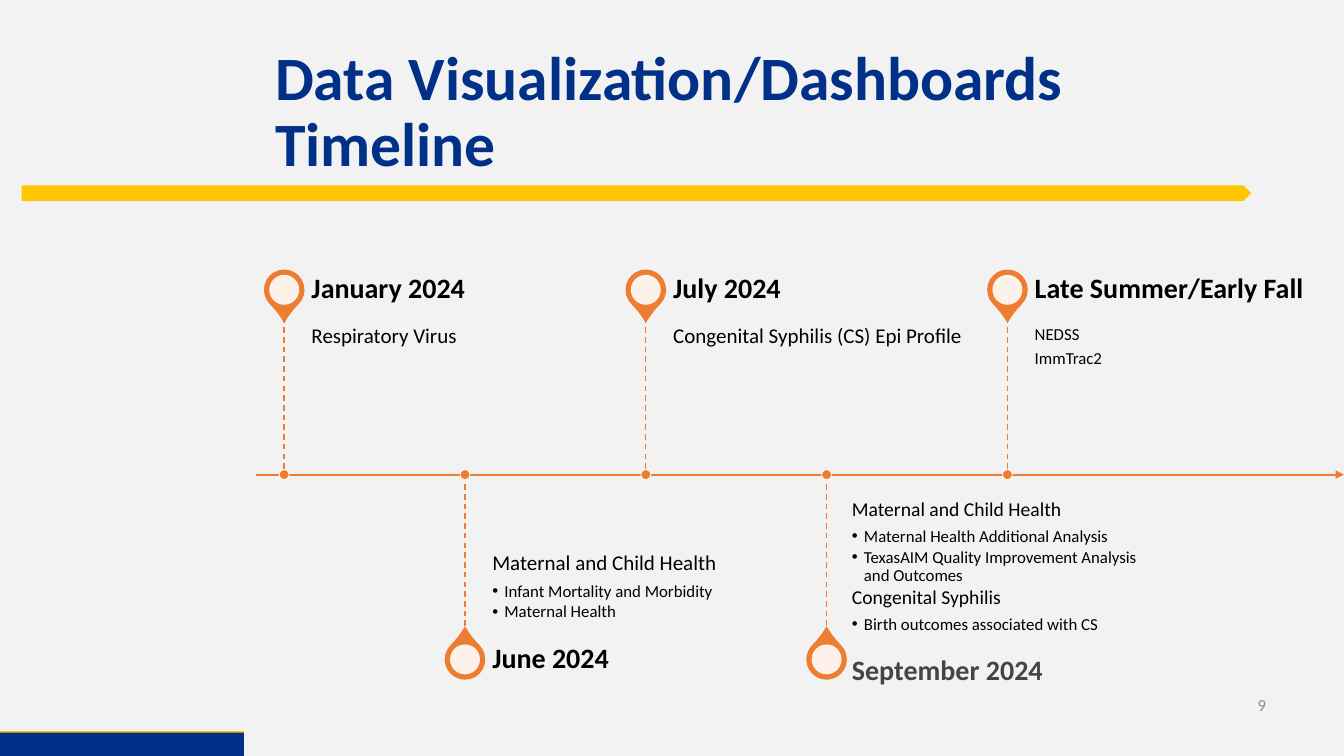
from lxml import etree
from pptx import Presentation
from pptx.dml.color import RGBColor
from pptx.enum.dml import MSO_LINE
from pptx.enum.shapes import MSO_CONNECTOR, MSO_SHAPE
from pptx.enum.text import MSO_ANCHOR, PP_ALIGN
from pptx.oxml.ns import qn
from pptx.util import Pt

# Content: date, date colour, (text, size, is bullet) lines
BLACK = RGBColor(0x00, 0x00, 0x00)
DARK_GRAY = RGBColor(0x44, 0x44, 0x44)
TITLE = "Data Visualization/Dashboards Timeline"
SLIDE_NUMBER = "9"
MILESTONES = [
    ("January 2024", BLACK, [("Respiratory Virus", 15, False)]),
    ("June 2024", BLACK, [
        ("Maternal and Child Health", 15, False),
        ("Infant Mortality and Morbidity", 12, True),
        ("Maternal Health", 12, True),
    ]),
    ("July 2024", BLACK, [("Congenital Syphilis (CS) Epi Profile", 15, False)]),
    ("September 2024", DARK_GRAY, [
        ("Maternal and Child Health", 14, False),
        ("Maternal Health Additional Analysis", 12, True),
        ("TexasAIM Quality Improvement Analysis and Outcomes", 12, True),
        ("Congenital Syphilis", 14, False),
        ("Birth outcomes associated with CS", 12, True),
    ]),
    ("Late Summer/Early Fall", BLACK, [("NEDSS", 12, False), ("ImmTrac2", 12, False)]),
]
# Milestone index: shift of its text (right, down)
TEXT_SHIFT = {3: (-1.5, 8.6)}
# Milestone index: top and bottom margins of its details
DETAIL_MARGINS = {4: (5.8, 8.6)}

# Style
FONT = "Calibri"
BACKGROUND = RGBColor(0xF2, 0xF2, 0xF2)
WHITE = RGBColor(0xFF, 0xFF, 0xFF)
NAVY = RGBColor(0x00, 0x30, 0x87)
YELLOW = RGBColor(0xFF, 0xC6, 0x00)
ORANGE = RGBColor(0xED, 0x7D, 0x31)
NUMBER_GRAY = RGBColor(0x8C, 0x8C, 0x8C)
STRAIGHT = MSO_CONNECTOR.STRAIGHT
DASH = MSO_LINE.DASH
RECTANGLE, OVAL = MSO_SHAPE.RECTANGLE, MSO_SHAPE.OVAL
TEARDROP, PENTAGON = MSO_SHAPE.TEAR, MSO_SHAPE.PENTAGON
TOP, MIDDLE, BOTTOM = MSO_ANCHOR.TOP, MSO_ANCHOR.MIDDLE, MSO_ANCHOR.BOTTOM

# Timeline geometry
AXIS_Y, AXIS_LEFT, AXIS_RIGHT = 339, 182.7, 960
FIRST_X, STEP_X = 203, 129.15
STEM, PIN_DISTANCE = 112.2, 132
DATE_HEIGHT, TEXT_WIDTH, TEXT_GAP = 39.6, 215.3, 19.5
PIN_SIZE, HOLE_SIZE, DOT_SIZE = 28, 21.4, 7
BULLET_INDENT = 8.64

presentation = Presentation()
presentation.slide_width, presentation.slide_height = Pt(960), Pt(540)
slide = presentation.slides.add_slide(presentation.slide_layouts[6])
slide.background.fill.solid()
slide.background.fill.fore_color.rgb = BACKGROUND


def add_filled(kind, left, top, width, height, fill, line=None, line_width=1):
    shape = slide.shapes.add_shape(kind, Pt(left), Pt(top), Pt(width), Pt(height))
    shape.shadow.inherit = False
    shape.fill.solid()
    shape.fill.fore_color.rgb = fill
    if line is None:
        shape.line.fill.background()
    else:
        shape.line.color.rgb = line
        shape.line.width = Pt(line_width)
    return shape


def add_centred(kind, x, y, size, *style):
    return add_filled(kind, x - size / 2, y - size / 2, size, size, *style)


def add_line(x1, y1, x2, y2, color, width):
    connector = slide.shapes.add_connector(STRAIGHT, Pt(x1), Pt(y1), Pt(x2), Pt(y2))
    connector.line.color.rgb = color
    connector.line.width = Pt(width)
    etree.SubElement(connector.element.spPr, qn("a:effectLst"))
    return connector


def add_text_box(left, top, width, height, anchor, margins=(7.2, 3.6, 7.2, 3.6)):
    frame = slide.shapes.add_textbox(Pt(left), Pt(top), Pt(width), Pt(height)).text_frame
    frame.word_wrap = True
    frame.vertical_anchor = anchor
    (frame.margin_left, frame.margin_top,
     frame.margin_right, frame.margin_bottom) = (Pt(margin) for margin in margins)
    return frame


def write(paragraph, text, size, color, bold=False, after=0, bullet=False):
    paragraph.text = text
    if bullet:
        properties = paragraph._p.get_or_add_pPr()
        properties.set("marL", str(Pt(BULLET_INDENT)))
        properties.set("indent", str(-Pt(BULLET_INDENT)))
        etree.SubElement(properties, qn("a:buFont"), typeface="Arial")
        etree.SubElement(properties, qn("a:buChar"), char="•")
    paragraph.line_spacing = 0.9
    paragraph.space_after = Pt(after)
    font = paragraph.font
    font.name, font.size, font.bold = FONT, Pt(size), bold
    font.color.rgb = color


def add_milestone(index, date, date_color, details):
    x = FIRST_X + index * STEP_X
    above = index % 2 == 0
    side = -1 if above else 1
    pin_y = AXIS_Y + side * PIN_DISTANCE
    stem_end = AXIS_Y + side * STEM

    # Pin
    pin = add_centred(TEARDROP, x, pin_y, PIN_SIZE, ORANGE, ORANGE, 1)
    pin.adjustments[0] = 1.15
    pin.rotation = 135 if above else 315
    hole = add_centred(OVAL, x, pin_y, HOLE_SIZE, WHITE)
    color = hole.fill._xPr.find(qn("a:solidFill"))[0]
    etree.SubElement(color, qn("a:alpha"), val="90000")

    # Details and date
    shift_x, shift_y = TEXT_SHIFT.get(index, (0, 0))
    left = x + TEXT_GAP + shift_x
    inner, outer = (7.2, 11.5) if above else (11.5, 7.2)
    margin_top, margin_bottom = DETAIL_MARGINS.get(index, (inner, outer))
    frame = add_text_box(left, min(AXIS_Y, stem_end) + shift_y, TEXT_WIDTH, STEM,
                         TOP if above else BOTTOM,
                         (0, margin_top, 7.2 if above else 0, margin_bottom))
    for number, (text, size, bullet) in enumerate(details):
        paragraph = frame.add_paragraph() if number else frame.paragraphs[0]
        write(paragraph, text, size, BLACK, after=size * (0.15 if bullet else 0.35),
              bullet=bullet)
    date_top = stem_end - DATE_HEIGHT if above else stem_end
    frame = add_text_box(left, date_top + shift_y, TEXT_WIDTH, DATE_HEIGHT, MIDDLE,
                         (0, 0, 10, 0))
    write(frame.paragraphs[0], date, 20, date_color, bold=True, after=7)

    # Stem and dot
    add_line(x, min(AXIS_Y, stem_end), x, max(AXIS_Y, stem_end),
             ORANGE, 1).line.dash_style = DASH
    add_centred(OVAL, x, AXIS_Y, DOT_SIZE, ORANGE, WHITE, 0.5)


# Frame of the slide
add_filled(PENTAGON, 15.4, 132.5, 878.4, 11, YELLOW)
add_line(0, 523.4, 174.2, 523.4, YELLOW, 3)
add_filled(RECTANGLE, 0, 523.4, 174.2, 16.6, NAVY)
number_frame = add_text_box(877, 489.8, 34.5, 28.8, MIDDLE)
write(number_frame.paragraphs[0], SLIDE_NUMBER, 12, NUMBER_GRAY)
number_frame.paragraphs[0].alignment = PP_ALIGN.RIGHT
title_frame = add_text_box(189.4, 28.8, 704.9, 104.4, MIDDLE)
write(title_frame.paragraphs[0], TITLE, 44, NAVY, bold=True, after=8)

# Timeline
axis = add_line(AXIS_LEFT, AXIS_Y, AXIS_RIGHT, AXIS_Y, ORANGE, 1.5)
etree.SubElement(axis.line._get_or_add_ln(), qn("a:tailEnd"), type="triangle")
for position, milestone in enumerate(MILESTONES):
    add_milestone(position, *milestone)

presentation.save("out.pptx")
